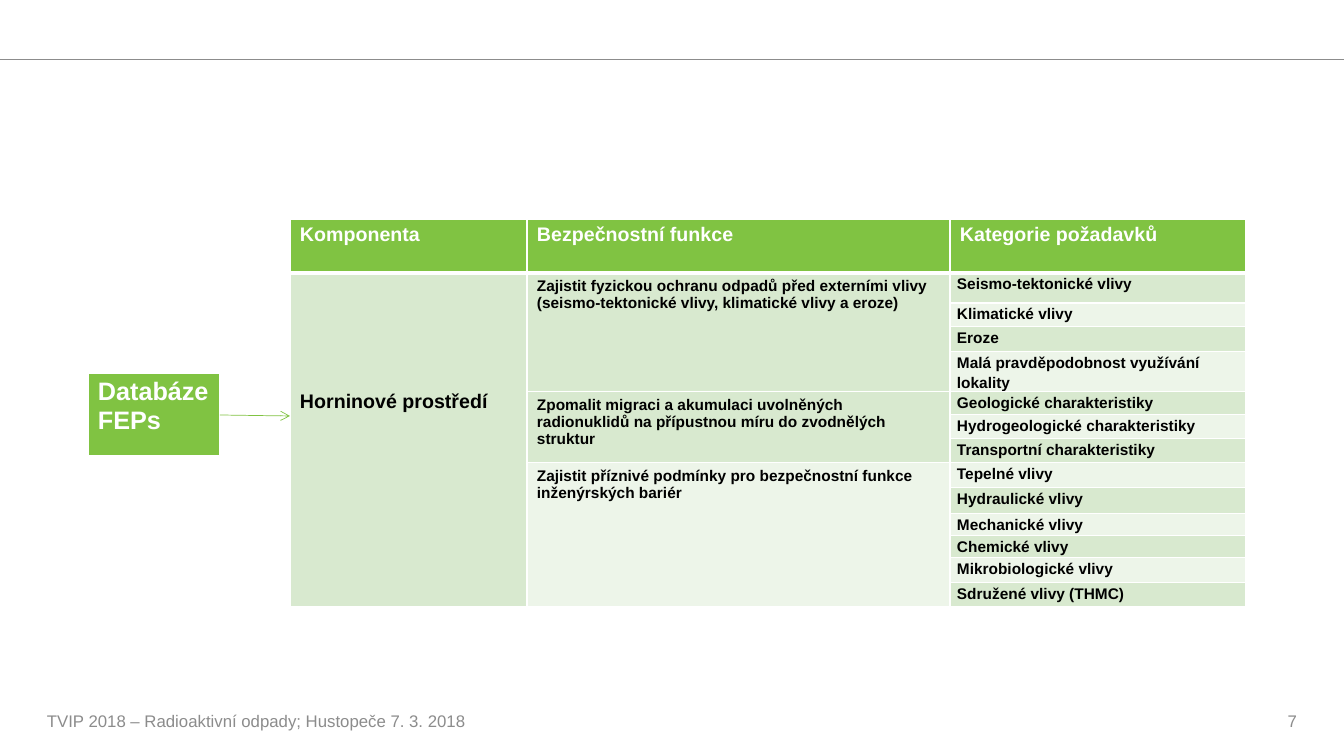
"""Build the slide linking the FEP database to rock environment requirements."""
from dataclasses import dataclass

import pptx
import pptx.dml.color
import pptx.enum.shapes
import pptx.enum.text
import pptx.oxml
import pptx.oxml.ns
import pptx.presentation
import pptx.shapes.connector
import pptx.slide
import pptx.table
import pptx.text.text
import pptx.util

RGBColor = pptx.dml.color.RGBColor
GREEN = RGBColor(0x80, 0xC3, 0x42)
DARK_BAND = RGBColor(0xD8, 0xE9, 0xCF)
LIGHT_BAND = RGBColor(0xED, 0xF5, 0xE9)
WHITE = RGBColor(0xFF, 0xFF, 0xFF)
BLACK = RGBColor(0, 0, 0)
GREY = RGBColor(0x8C, 0x8C, 0x8C)
EMU_PER_PX = 914400 / 100.8


@dataclass(frozen=True)
class SafetyFunction:
    """A safety function with the requirement categories it covers."""
    wording: str
    categories: tuple[str, ...]


@dataclass(frozen=True)
class CellStyle:
    """Text look and insets of a table cell, insets in px."""
    size: int
    color: RGBColor
    side: int = 10
    top: int = 5
    bottom: int = 5
    spacing: float = 1.0


@dataclass(frozen=True)
class Footer:
    """A footer text with its horizontal place in px."""
    wording: str
    left: int
    width: int
    align: pptx.enum.text.PP_ALIGN


HEADINGS = ("Komponenta", "Bezpečnostní funkce", "Kategorie požadavků")
COMPONENT = "Horninové prostředí"
SAFETY_FUNCTIONS = (
    SafetyFunction(
        "Zajistit fyzickou ochranu odpadů před externími vlivy "
        "(seismo-tektonické vlivy, klimatické vlivy a eroze)",
        ("Seismo-tektonické vlivy", "Klimatické vlivy", "Eroze",
         "Malá pravděpodobnost využívání lokality")),
    SafetyFunction(
        "Zpomalit migraci a akumulaci uvolněných radionuklidů "
        "na přípustnou míru do zvodnělých struktur",
        ("Geologické charakteristiky", "Hydrogeologické charakteristiky",
         "Transportní charakteristiky")),
    SafetyFunction(
        "Zajistit příznivé podmínky pro bezpečnostní funkce inženýrských bariér",
        ("Tepelné vlivy", "Hydraulické vlivy", "Mechanické vlivy",
         "Chemické vlivy", "Mikrobiologické vlivy", "Sdružené vlivy (THMC)")),
)
COLUMN_WIDTHS = (237, 423, 296)
ROW_HEIGHTS = (54, 30, 24, 25, 40, 23, 24, 24, 25, 26, 22, 22, 25, 24)
FOOTERS = (
    Footer("TVIP 2018 – Radioaktivní odpady; Hustopeče 7. 3. 2018", 37, 490,
           pptx.enum.text.PP_ALIGN.LEFT),
    Footer("7", 1005, 302, pptx.enum.text.PP_ALIGN.RIGHT),
)
HEADING_STYLE = CellStyle(14, WHITE)
COMPONENT_STYLE = CellStyle(14, BLACK, top=118)
FUNCTION_STYLE = CellStyle(11, BLACK)
CATEGORY_STYLE = CellStyle(11, BLACK, side=7, top=0, bottom=0, spacing=1.15)
DATABASE_STYLE = CellStyle(18, WHITE)


def px(length: int) -> pptx.util.Emu:
    """Turn px into EMU."""
    return pptx.util.Emu(round(length * EMU_PER_PX))


def format_text(paragraph: pptx.text.text._Paragraph, size: int,
                color: RGBColor, bold: bool) -> None:
    """Apply the slide font to every run of a paragraph."""
    for run in paragraph.runs:
        run.font.name = "Arial"
        run.font.size = pptx.util.Pt(size)
        run.font.bold = bold
        run.font.color.rgb = color


def paint_cell(cell: pptx.table._Cell, fill: RGBColor,
               borders: dict[str, int]) -> None:
    """Fill a cell and draw its white borders, widths in points."""
    properties = cell._tc.get_or_add_tcPr()
    for edge, width in borders.items():
        properties.append(pptx.oxml.parse_xml(
            f'<a:ln{edge} {pptx.oxml.ns.nsdecls("a")} w="{pptx.util.Pt(width)}">'
            f'<a:solidFill><a:srgbClr val="{WHITE}"/></a:solidFill></a:ln{edge}>'))
    cell.fill.solid()
    cell.fill.fore_color.rgb = fill


def write_cell(cell: pptx.table._Cell, wording: str, style: CellStyle) -> None:
    """Write bold text into a cell."""
    cell.margin_left = cell.margin_right = px(style.side)
    cell.margin_top = px(style.top)
    cell.margin_bottom = px(style.bottom)
    cell.text_frame.text = wording
    paragraph = cell.text_frame.paragraphs[0]
    paragraph.line_spacing = style.spacing
    format_text(paragraph, style.size, style.color, True)


def add_grid(slide: pptx.slide.Slide, left: int, top: int,
             widths: tuple[int, ...], heights: tuple[int, ...]) -> pptx.table.Table:
    """Add a table with a green header row and banded rows below."""
    grid = slide.shapes.add_table(
        len(heights), len(widths), px(left), px(top),
        px(sum(widths)), px(sum(heights))).table
    for column, width in zip(grid.columns, widths):
        column.width = px(width)
    for index, (row, height) in enumerate(zip(grid.rows, heights)):
        row.height = px(height)
        band = DARK_BAND if index % 2 else LIGHT_BAND
        for cell in row.cells:
            if index == 0:
                paint_cell(cell, GREEN, {"L": 1, "R": 1, "T": 1, "B": 3})
            else:
                paint_cell(cell, band, {"L": 1, "R": 1, "B": 1})
    return grid


def add_requirements(slide: pptx.slide.Slide) -> None:
    """Add the table of component, safety functions and categories."""
    grid = add_grid(slide, 290, 219, COLUMN_WIDTHS, ROW_HEIGHTS)
    for column, heading in enumerate(HEADINGS):
        write_cell(grid.cell(0, column), heading, HEADING_STYLE)
    grid.cell(1, 0).merge(grid.cell(len(ROW_HEIGHTS) - 1, 0))
    write_cell(grid.cell(1, 0), COMPONENT, COMPONENT_STYLE)
    first = 1
    for function in SAFETY_FUNCTIONS:
        following = first + len(function.categories)
        grid.cell(first, 1).merge(grid.cell(following - 1, 1))
        write_cell(grid.cell(first, 1), function.wording, FUNCTION_STYLE)
        for row, category in enumerate(function.categories, first):
            write_cell(grid.cell(row, 2), category, CATEGORY_STYLE)
        first = following


def add_line(slide: pptx.slide.Slide, start: tuple[int, int], end: tuple[int, int],
             color: RGBColor) -> pptx.shapes.connector.Connector:
    """Add a thin straight line without shadow."""
    line = slide.shapes.add_connector(
        pptx.enum.shapes.MSO_CONNECTOR.STRAIGHT, *map(px, start + end))
    line.line.color.rgb = color
    line.line.width = pptx.util.Pt(0.5)
    line._element.spPr.append(pptx.oxml.parse_xml(
        f'<a:effectLst {pptx.oxml.ns.nsdecls("a")}/>'))
    return line


def add_footer(slide: pptx.slide.Slide, footer: Footer) -> None:
    """Add one grey footer text."""
    box = slide.shapes.add_textbox(px(footer.left), px(701), px(footer.width), px(40))
    box.text_frame.word_wrap = True
    box.text_frame.vertical_anchor = pptx.enum.text.MSO_ANCHOR.MIDDLE
    box.text_frame.text = footer.wording
    paragraph = box.text_frame.paragraphs[0]
    paragraph.alignment = footer.align
    format_text(paragraph, 12, GREY, False)


def main() -> None:
    """Build and save the slide."""
    deck = pptx.Presentation()
    deck.slide_width, deck.slide_height = px(1344), px(756)
    slide = deck.slides.add_slide(deck.slide_layouts[6])
    add_line(slide, (0, 59), (1344, 59), GREY)
    add_requirements(slide)
    for footer in FOOTERS:
        add_footer(slide, footer)
    database = add_grid(slide, 88, 373, (132,), (84,))
    write_cell(database.cell(0, 0), "Databáze FEPs", DATABASE_STYLE)
    arrow = add_line(slide, (220, 415), (290, 416), GREEN)
    arrow.line._get_or_add_ln().append(pptx.oxml.parse_xml(
        f'<a:tailEnd {pptx.oxml.ns.nsdecls("a")} type="arrow"/>'))
    deck.save("out.pptx")


if __name__ == "__main__":
    main()
